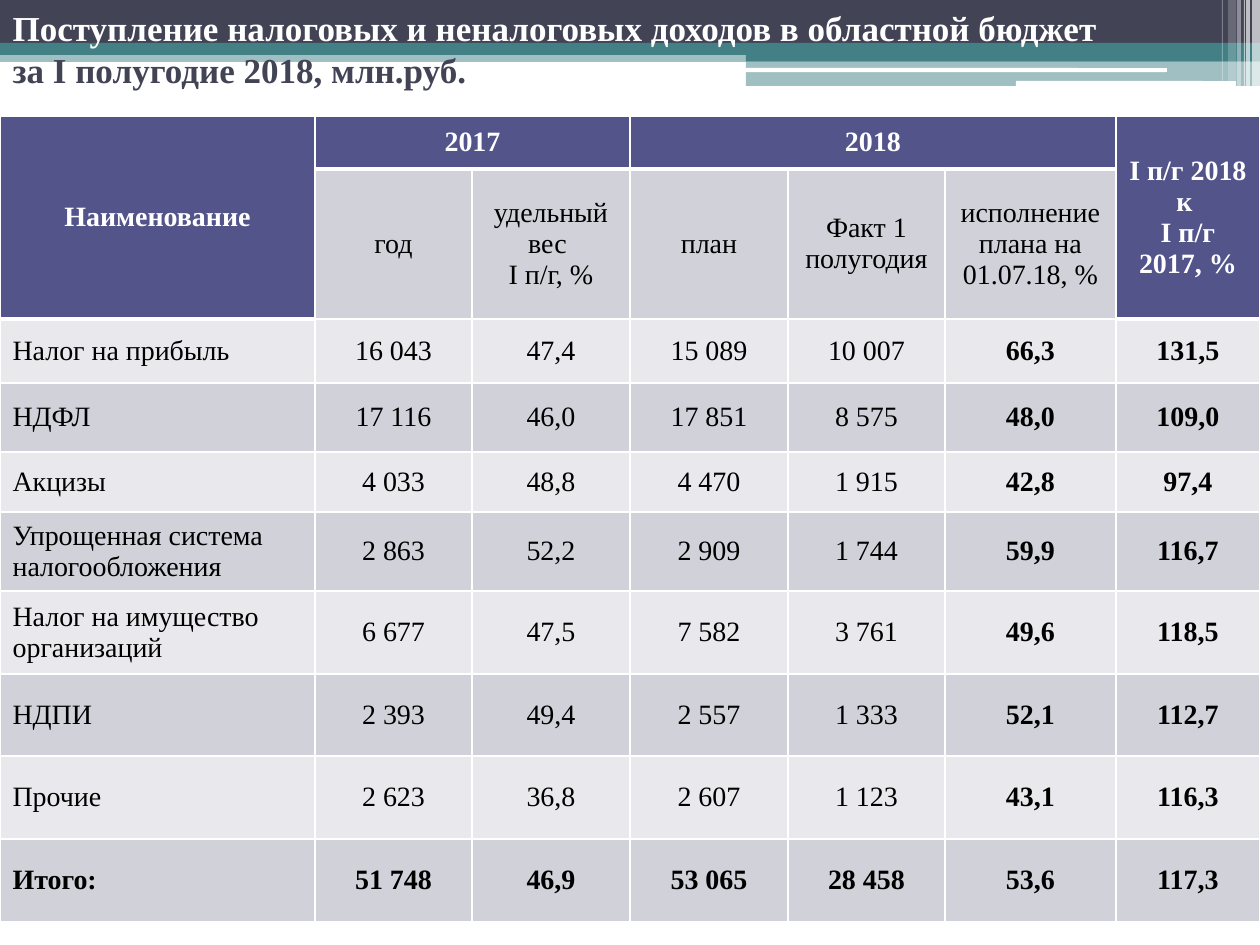
from lxml import etree
from pptx import Presentation
from pptx.dml.color import RGBColor
from pptx.enum.shapes import MSO_SHAPE
from pptx.enum.text import MSO_ANCHOR, MSO_AUTO_SIZE, PP_ALIGN
from pptx.oxml.ns import qn
from pptx.util import Emu, Pt

RECT, ROUND = MSO_SHAPE.RECTANGLE, MSO_SHAPE.ROUNDED_RECTANGLE
LEFT, CENTER, MIDDLE = PP_ALIGN.LEFT, PP_ALIGN.CENTER, MSO_ANCHOR.MIDDLE
FONT = "Times New Roman"
COLORS = {"white": "FFFFFF", "black": "000000", "dark": "424456", "teal": "438086",
          "header": "53548A", "odd": "D1D1DA", "even": "E9E9ED"}

# Content
TITLE = [("Поступление налоговых и неналоговых доходов в областной бюджет ", "white"),
         ("за I полугодие 2018, млн.руб.", "dark")]
# \n starts a paragraph, \v breaks a line
ROWS = [
    ["Наименование", "2017", "", "2018", "", "", "I п/г 2018 к \vI п/г 2017, %"],
    ["", "год", "удельный\nвес \vI п/г, %", "план", "Факт 1 полугодия",
     "исполнение плана на 01.07.18, %", ""],
    ["Налог на прибыль", "16 043", "47,4", "15 089", "10 007", "66,3", "131,5"],
    ["НДФЛ", "17 116", "46,0", "17 851", "8 575", "48,0", "109,0"],
    ["Акцизы", "4 033", "48,8", "4 470", "1 915", "42,8", "97,4"],
    ["Упрощенная система налогообложения", "2 863", "52,2", "2 909", "1 744", "59,9", "116,7"],
    ["Налог на имущество организаций", "6 677", "47,5", "7 582", "3 761", "49,6", "118,5"],
    ["НДПИ", "2 393", "49,4", "2 557", "1 333", "52,1", "112,7"],
    ["Прочие", "2 623", "36,8", "2 607", "1 123", "43,1", "116,3"],
    ["Итого:", "51 748", "46,9", "53 065", "28 458", "53,6", "117,3"],
]
MERGES = [((0, 0), (1, 0)), ((0, 1), (0, 2)), ((0, 3), (0, 5)), ((0, 6), (1, 6))]

# Geometry in px
WIDTH, HEIGHT, TABLE_TOP = 1260, 945, 116
COLUMN_WIDTHS = [315, 157, 158, 158, 157, 171, 144]
ROW_HEIGHTS = [53, 150, 64, 69, 60, 79, 83, 82, 83, 83]
# Banner: preset, left, top, width, height, colour, opacity %
BANNER = [
    (RECT, 0, 50, WIDTH, 12, "teal", 50),
    (RECT, 0, 0, WIDTH, 43, "dark", 100),
    (RECT, 0, 43, WIDTH, 12, "teal", 100),
    (RECT, 746, 49, 514, 12, "teal", 100),
    (RECT, 746, 61, 514, 25, "teal", 50),
    (ROUND, 745, 68, 422, 4, "white", 100),
    (ROUND, 1016, 81, 220, 5, "white", 100),
]
# Stripes at the right end: left, width, height, opacity %
STRIPES = [(1252, 8, 86, 65), (1246, 4, 86, 65), (1244, 1, 86, 60),
           (1237, 4, 86, 40), (1228, 8, 81, 20), (1222, 1, 81, 30)]
BANNER += [(RECT, left, 0, width, height, "white", opacity)
           for left, width, height, opacity in STRIPES]


def px(length):
    return Emu(round(length * 914400 / 126))


def color(name):
    return RGBColor.from_string(COLORS[name])


def style_font(font, size, color_name, bold):
    for name, value in {"name": FONT, "size": Pt(size), "bold": bold}.items():
        setattr(font, name, value)
    font.color.rgb = color(color_name)


def add_band(slide, preset, left, top, width, height, color_name, opacity):
    shape = slide.shapes.add_shape(preset, px(left), px(top), px(width), px(height))
    shape.shadow.inherit = False
    shape.line.fill.background()
    shape.fill.solid()
    shape.fill.fore_color.rgb = color(color_name)
    if opacity < 100:
        fill_color = shape.fill._xPr.find(qn("a:solidFill"))[0]
        etree.SubElement(fill_color, qn("a:alpha"), val=str(opacity * 1000))


def set_borders(cell, widths):
    properties = cell._tc.get_or_add_tcPr()
    for side, points in widths.items():
        line = etree.SubElement(properties, qn("a:ln" + side), w=str(Pt(points)))
        fill = etree.SubElement(line, qn("a:solidFill"))
        etree.SubElement(fill, qn("a:srgbClr"), val=COLORS["white"])


def is_header(row, column):
    return row == 0 or (row == 1 and column in (0, 6))


def ends_header(row, column):
    return is_header(row, column) and not is_header(row + 1, column)


def fill_cell(cell, row, column, text):
    header = is_header(row, column)
    set_borders(cell, {"L": 1, "R": 1, "T": 3 if ends_header(row - 1, column) else 1,
                       "B": 3 if ends_header(row, column) else 1})
    cell.fill.solid()
    cell.fill.fore_color.rgb = color("header" if header else "odd" if row % 2 else "even")
    cell.vertical_anchor = MIDDLE
    if row > 1 and column > 0:
        for side in ("left", "top", "right", "bottom"):
            setattr(cell, "margin_" + side, 0)
    if not text:
        return
    cell.text = text
    bold = header or row == len(ROWS) - 1 or (row > 1 and column > 4)
    for paragraph in cell.text_frame.paragraphs:
        paragraph.alignment = LEFT if row > 1 and column == 0 else CENTER
        for run in paragraph.runs:
            style_font(run.font, 16, "white" if header else "black", bold)


def add_title(slide):
    title = slide.shapes.title
    title.left, title.top, title.width, title.height = 0, 0, px(WIDTH), px(135)
    slide.shapes._spTree.append(title._element)  # in front of the banner
    frame = title.text_frame
    for name, value in {"word_wrap": True, "auto_size": MSO_AUTO_SIZE.NONE,
                        "vertical_anchor": MIDDLE, "margin_top": 0,
                        "margin_bottom": px(37)}.items():
        setattr(frame, name, value)
    paragraph = frame.paragraphs[0]
    paragraph.alignment = LEFT
    paragraph.line_spacing = Pt(24)
    for index, (text, color_name) in enumerate(TITLE):
        if index:
            paragraph.add_line_break()
        run = paragraph.add_run()
        run.text = text
        style_font(run.font, 20, color_name, True)


def add_revenue_table(slide):
    table = slide.shapes.add_table(len(ROWS), len(COLUMN_WIDTHS), 0, px(TABLE_TOP),
                                   px(WIDTH), px(sum(ROW_HEIGHTS))).table
    for column, width in zip(table.columns, COLUMN_WIDTHS):
        column.width = px(width)
    for row, height in zip(table.rows, ROW_HEIGHTS):
        row.height = px(height)
    for first, last in MERGES:
        table.cell(*first).merge(table.cell(*last))
    for row, texts in enumerate(ROWS):
        for column, text in enumerate(texts):
            fill_cell(table.cell(row, column), row, column, text)


def main():
    presentation = Presentation()
    presentation.slide_width, presentation.slide_height = px(WIDTH), px(HEIGHT)
    slide = presentation.slides.add_slide(presentation.slide_layouts[5])
    for band in BANNER:
        add_band(slide, *band)
    add_title(slide)
    add_revenue_table(slide)
    presentation.save("out.pptx")


if __name__ == "__main__":
    main()
